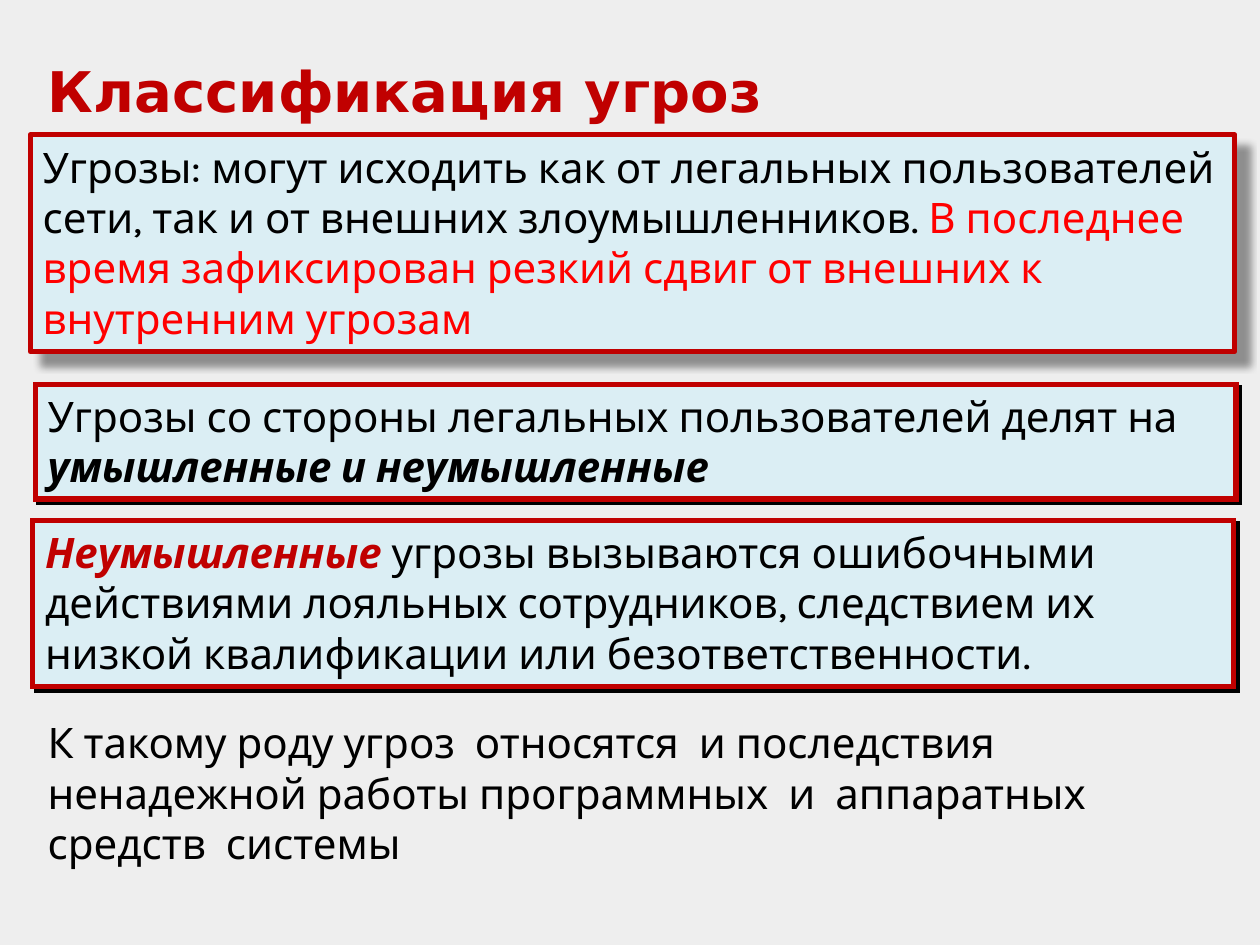
from dataclasses import dataclass

from lxml import etree
from pptx import Presentation
from pptx.dml.color import RGBColor
from pptx.enum.shapes import MSO_SHAPE
from pptx.enum.text import MSO_ANCHOR, MSO_AUTO_SIZE, PP_ALIGN
from pptx.oxml.ns import qn
from pptx.util import Inches, Pt

RECT = MSO_SHAPE.RECTANGLE
TOP, MIDDLE = MSO_ANCHOR.TOP, MSO_ANCHOR.MIDDLE
GROW, NO_FIT = MSO_AUTO_SIZE.SHAPE_TO_FIT_TEXT, MSO_AUTO_SIZE.NONE
LEFT = PP_ALIGN.LEFT


@dataclass(frozen=True)
class Theme:
    """Colours, fonts and sizes of the slide."""
    background: str = "EEEEEE"
    panel: str = "DBEEF4"
    accent: str = "C00000"
    alert: str = "FF0000"
    text: str = "000000"
    title_font: str = "DejaVu Sans"
    body_font: str = "Karla"
    title_size: int = 32
    body_size: int = 24
    border: int = 3


@dataclass(frozen=True)
class Shadow:
    """Opacity in percent, blur and distance in points."""
    opacity: int
    blur: float
    distance: float


THEME = Theme()
SOFT = Shadow(40, 4, 10)
HARD = Shadow(100, 0, 2.8)


def add_run(p, text, color=THEME.text, font=THEME.body_font, size=THEME.body_size,
            bold=False, italic=False):
    """Add one formatted run to a paragraph."""
    r = p.add_run()
    r.text = text
    r.font.name, r.font.size = font, Pt(size)
    r.font.bold, r.font.italic = bold, italic
    r.font.color.rgb = RGBColor.from_string(color)


def fill_text(sp, runs, anchor=TOP, fit=GROW):
    """Write a left-aligned paragraph from (text, format) pairs."""
    tf = sp.text_frame
    tf.word_wrap, tf.auto_size, tf.vertical_anchor = True, fit, anchor
    p = tf.paragraphs[0]
    p.alignment = LEFT
    for text, style in runs:
        add_run(p, text, **style)


def set_shadow(sp, shadow):
    """Cast a black shadow towards the lower right."""
    sp.shadow.inherit = False
    effects = sp._element.spPr.find(qn("a:effectLst"))
    outer = etree.SubElement(
        effects, qn("a:outerShdw"), blurRad=str(Pt(shadow.blur)),
        dist=str(Pt(shadow.distance)), dir=str(45 * 60000), algn="tl", rotWithShape="0")
    color = etree.SubElement(outer, qn("a:srgbClr"), val=THEME.text)
    etree.SubElement(color, qn("a:alpha"), val=str(shadow.opacity * 1000))


def add_title(s, text):
    """Place and format the title placeholder."""
    sp = s.shapes.title
    sp.left, sp.top = Inches(0.28), Inches(0.36)
    sp.width, sp.height = Inches(9.37), Inches(0.71)
    style = dict(color=THEME.accent, font=THEME.title_font, size=THEME.title_size, bold=True)
    fill_text(sp, [(text, style)], MIDDLE, NO_FIT)


def add_panel(s, box, runs, shadow):
    """Add a bordered panel with a shadow."""
    sp = s.shapes.add_shape(RECT, *map(Inches, box))
    sp.fill.solid()
    sp.fill.fore_color.rgb = RGBColor.from_string(THEME.panel)
    sp.line.color.rgb = RGBColor.from_string(THEME.accent)
    sp.line.width = Pt(THEME.border)
    if shadow is HARD:
        etree.SubElement(sp.line._get_or_add_ln(), qn("a:miter"), lim="800000")
    set_shadow(sp, shadow)
    fill_text(sp, runs)


def add_note(s, box, text):
    """Add plain body text."""
    fill_text(s.shapes.add_textbox(*map(Inches, box)), [(text, {})])


def main():
    """Build the slide on the classification of threats."""
    prs = Presentation()
    prs.slide_width, prs.slide_height = Inches(10), Inches(7.5)
    s = prs.slides.add_slide(prs.slide_layouts[5])
    s.background.fill.solid()
    s.background.fill.fore_color.rgb = RGBColor.from_string(THEME.background)
    strong = dict(bold=True, italic=True)

    add_title(s, "Классификация угроз")
    add_panel(s, (0.24, 1.07, 9.56, 1.72), [
        ("Угрозы: могут исходить как от легальных пользователей сети, "
         "так и от внешних злоумышленников. ", {}),
        ("В последнее время зафиксирован резкий сдвиг от внешних к внутренним угрозам",
         dict(color=THEME.alert)),
    ], SOFT)
    add_panel(s, (0.28, 3.05, 9.53, 0.91), [
        ("Угрозы со стороны легальных пользователей делят на ", {}),
        ("умышленные и неумышленные", strong),
    ], HARD)
    add_panel(s, (0.26, 4.13, 9.53, 1.32), [
        ("Неумышленные", dict(color=THEME.accent, **strong)),
        (" угрозы вызываются ошибочными действиями лояльных сотрудников, "
         "следствием их низкой квалификации или безответственности.", {}),
    ], HARD)
    add_note(s, (0.28, 5.64, 9.53, 1.31),
             "К такому роду угроз  относятся  и последствия  ненадежной работы "
             "программных  и  аппаратных  средств  системы")
    prs.save("out.pptx")


if __name__ == "__main__":
    main()
